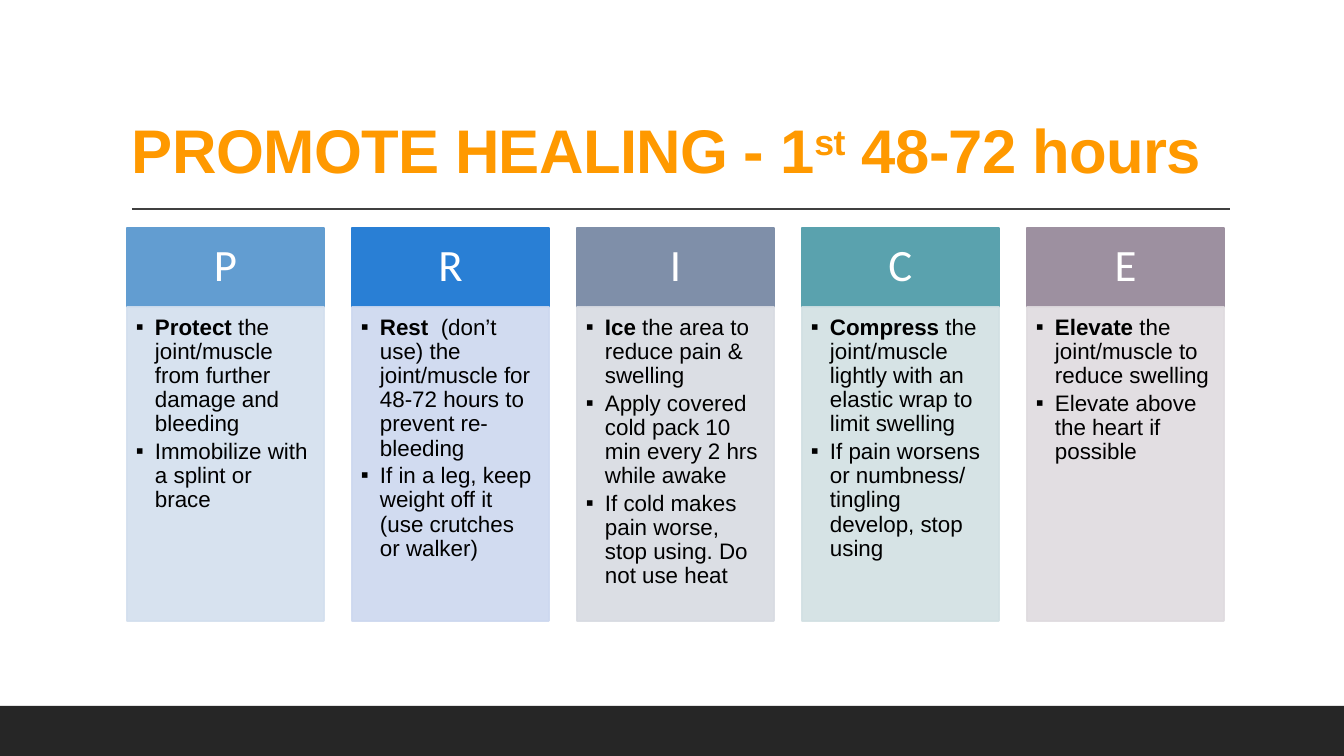
import dataclasses

import lxml.etree
import pptx
import pptx.dml.color
import pptx.enum.shapes
import pptx.enum.text
import pptx.oxml.ns
import pptx.util

qn = pptx.oxml.ns.qn
Anchor = pptx.enum.text.MSO_ANCHOR
Align = pptx.enum.text.PP_ALIGN


@dataclasses.dataclass(frozen=True)
class Theme:
    title_color: str = "FF9900"
    rule_color: str = "404040"
    footer_color: str = "262626"
    letter_color: str = "FFFFFF"
    body_color: str = "000000"
    title_size: int = 44
    letter_size: int = 32
    body_size: int = 16
    body_font: str = "Arial"
    letter_font: str = "Calibri"
    line_spacing: float = 0.9
    bullet_gap: float = 2.4
    border_width: float = 1.25


# Letter, header colour, body colour, bullets as (bold lead, remaining text)
COLUMNS = [
    ("P", "629DD1", "D3DFEE", [
        ("Protect", " the joint/muscle from further damage and bleeding"),
        ("", "Immobilize with a splint or brace")]),
    ("R", "297FD5", "CDD8EF", [
        ("Rest", "  (don’t use) the joint/muscle for 48-72 hours to prevent re-bleeding"),
        ("", "If in a leg, keep weight off it (use crutches or walker)")]),
    ("I", "7F8FA9", "D8DBE2", [
        ("Ice", " the area to reduce pain & swelling"),
        ("", "Apply covered cold pack 10 min every 2 hrs while awake"),
        ("", "If cold makes pain worse, stop using. Do not use heat")]),
    ("C", "5AA2AE", "D2E0E3", [
        ("Compress", " the joint/muscle lightly with an elastic wrap to limit swelling"),
        ("", "If pain worsens or numbness/ tingling develop, stop using")]),
    ("E", "9D90A0", "DFDBDF", [
        ("Elevate", " the joint/muscle to reduce swelling"),
        ("", "Elevate above the heart if possible")]),
]

SLIDE_WIDTH, SLIDE_HEIGHT = 1344, 756
FOOTER_TOP = 706
COLUMN_LEFT, COLUMN_PITCH, COLUMN_WIDTH = 127, 225, 197
HEADER_TOP, HEADER_HEIGHT, BODY_HEIGHT = 228, 79, 314


def px(length):
    return pptx.util.Emu(round(length * 914400 / 100.8))


def rgb(color):
    return pptx.dml.color.RGBColor.from_string(color)


class SlideBuilder:
    def __init__(self, slide, theme):
        self.slide = slide
        self.theme = theme

    def rectangle(self, left, top, width, height, color, bordered=False, opacity=100):
        shape = self.slide.shapes.add_shape(
            pptx.enum.shapes.MSO_SHAPE.RECTANGLE,
            px(left), px(top), px(width), px(height))
        shape.shadow.inherit = False
        shape.fill.solid()
        shape.fill.fore_color.rgb = rgb(color)
        if bordered:
            shape.line.color.rgb = rgb(color)
            shape.line.width = pptx.util.Pt(self.theme.border_width)
        else:
            shape.line.fill.background()
        if opacity < 100:
            for element in shape._element.spPr.iter(qn("a:srgbClr")):
                lxml.etree.SubElement(element, qn("a:alpha"), val=str(opacity * 1000))
        return shape

    def rule(self, left, right, y):
        line = self.slide.shapes.add_connector(
            pptx.enum.shapes.MSO_CONNECTOR.STRAIGHT, px(left), px(y), px(right), px(y))
        line.line.color.rgb = rgb(self.theme.rule_color)
        line.line.width = pptx.util.Pt(1)
        lxml.etree.SubElement(line._element.spPr, qn("a:effectLst"))

    def frame(self, shape, anchor, insets):
        """Set up wrapping, anchor and insets (left, top, right, bottom)."""
        frame = shape.text_frame
        frame.word_wrap = True
        frame.vertical_anchor = anchor
        (frame.margin_left, frame.margin_top,
         frame.margin_right, frame.margin_bottom) = map(px, insets)
        return frame

    def run(self, paragraph, text, size, color, font, bold=False):
        run = paragraph.add_run()
        run.text = text
        run.font.size = pptx.util.Pt(size)
        run.font.color.rgb = rgb(color)
        run.font.name = font
        run.font.bold = bold
        return run

    def title(self, left, top, width, height, parts):
        """Write (text, is_superscript) parts as one bold heading."""
        theme = self.theme
        box = self.slide.shapes.add_textbox(px(left), px(top), px(width), px(height))
        paragraph = self.frame(box, Anchor.BOTTOM, (11, 5, 10, 4)).paragraphs[0]
        paragraph.line_spacing = theme.line_spacing
        for text, is_superscript in parts:
            run = self.run(paragraph, text, theme.title_size, theme.title_color,
                           theme.body_font, bold=True)
            properties = run.font._element
            properties.set("spc", "-50")
            if is_superscript:
                properties.set("baseline", "30000")

    def header(self, left, letter, color):
        theme = self.theme
        shape = self.rectangle(left, HEADER_TOP, COLUMN_WIDTH, HEADER_HEIGHT, color,
                               bordered=True)
        paragraph = self.frame(shape, Anchor.MIDDLE, (25, 14, 25, 16)).paragraphs[0]
        paragraph.alignment = Align.CENTER
        paragraph.line_spacing = theme.line_spacing
        self.run(paragraph, letter, theme.letter_size, theme.letter_color,
                 theme.letter_font)

    def body(self, left, color, bullets):
        theme = self.theme
        shape = self.rectangle(left, HEADER_TOP + HEADER_HEIGHT, COLUMN_WIDTH,
                               BODY_HEIGHT, color, bordered=True, opacity=90)
        frame = self.frame(shape, Anchor.TOP, (9, 9, 12, 14))
        for index, (lead, text) in enumerate(bullets):
            paragraph = frame.add_paragraph() if index else frame.paragraphs[0]
            self.bullet(paragraph)
            paragraph.alignment = Align.LEFT
            paragraph.line_spacing = theme.line_spacing
            paragraph.space_after = pptx.util.Pt(theme.bullet_gap)
            for part, bold in ((lead, True), (text, False)):
                if part:
                    self.run(paragraph, part, theme.body_size, theme.body_color,
                             theme.body_font, bold)

    def bullet(self, paragraph):
        properties = paragraph._p.get_or_add_pPr()
        properties.set("marL", str(px(19)))
        properties.set("indent", str(-px(19)))
        lxml.etree.SubElement(properties, qn("a:buFont"), typeface=self.theme.body_font)
        lxml.etree.SubElement(properties, qn("a:buChar"), char="▪")


def main():
    presentation = pptx.Presentation()
    presentation.slide_width = px(SLIDE_WIDTH)
    presentation.slide_height = px(SLIDE_HEIGHT)
    theme = Theme()
    builder = SlideBuilder(
        presentation.slides.add_slide(presentation.slide_layouts[6]), theme)

    builder.rectangle(0, FOOTER_TOP, SLIDE_WIDTH, SLIDE_HEIGHT - FOOTER_TOP,
                      theme.footer_color)
    builder.rule(132, 1230, 209)
    builder.title(121, 31, 1109, 160, [
        ("PROMOTE HEALING - 1", False), ("st", True), (" 48-72 hours", False)])
    for index, (letter, header_color, body_color, bullets) in enumerate(COLUMNS):
        left = COLUMN_LEFT + index * COLUMN_PITCH
        builder.header(left, letter, header_color)
        builder.body(left, body_color, bullets)

    presentation.save("out.pptx")


if __name__ == "__main__":
    main()
